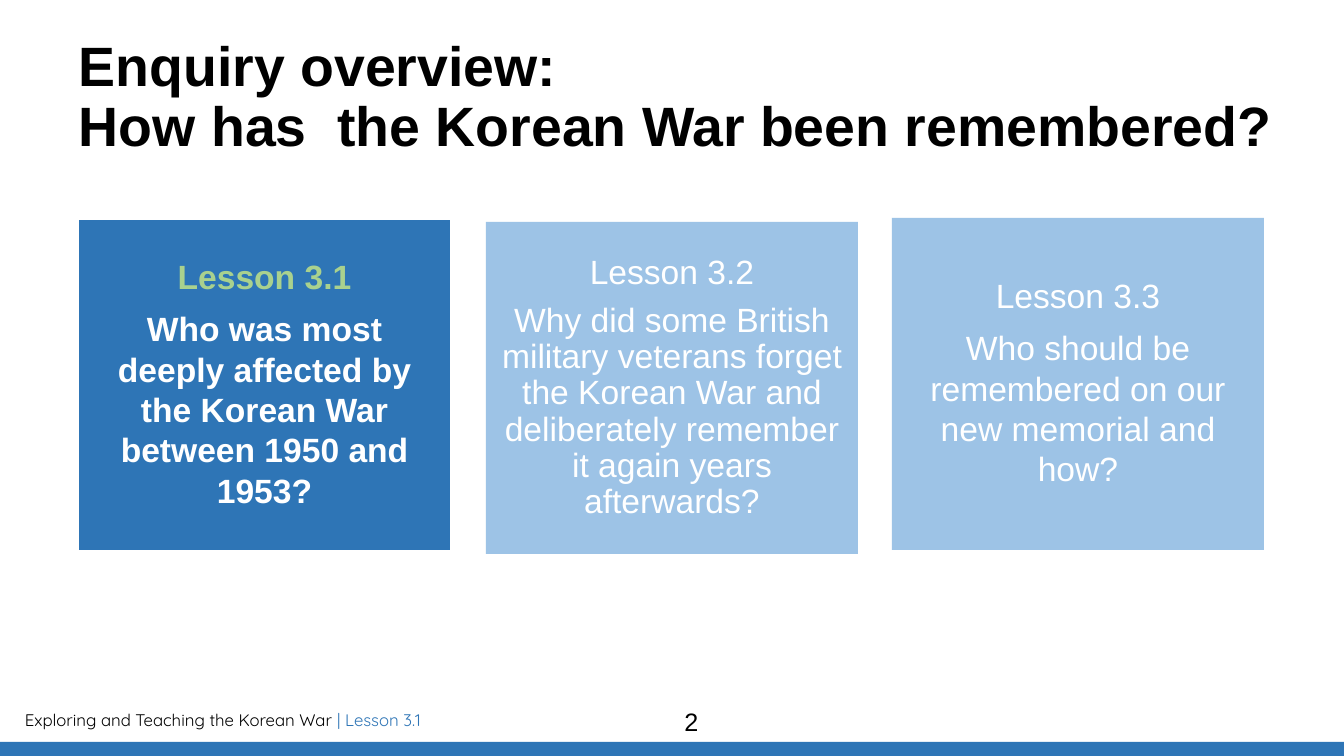
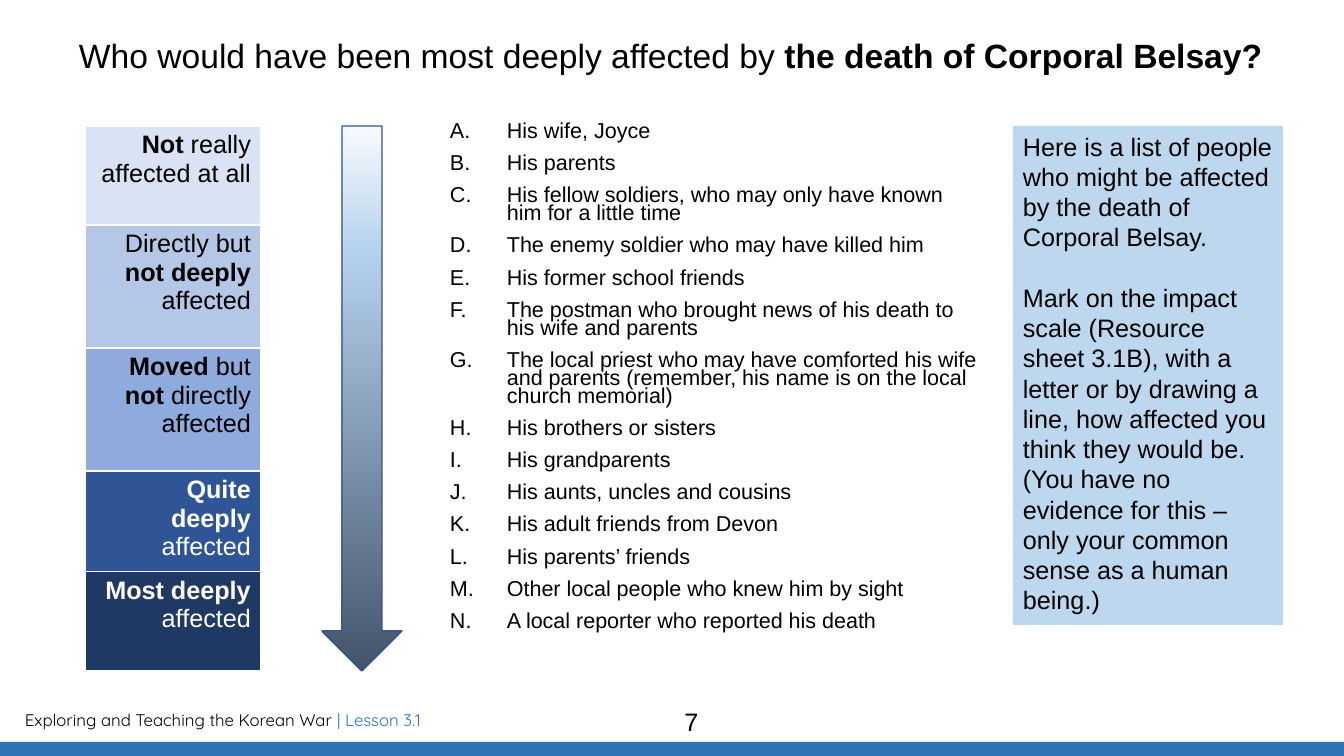
from lxml import etree
from pptx import Presentation
from pptx.dml.color import RGBColor
from pptx.enum.shapes import MSO_SHAPE as Shape
from pptx.enum.text import MSO_ANCHOR as Anchor, PP_ALIGN as Align
from pptx.oxml.ns import qn
from pptx.util import Emu, Pt

PX = 914400 / 100.8
FONT = "Arial"
FOOTER_FONT = "Quicksand"
BLACK = RGBColor(0x00, 0x00, 0x00)
WHITE = RGBColor(0xFF, 0xFF, 0xFF)
BLUE = RGBColor(0x2E, 0x75, 0xB6)
LIGHT_BLUE = RGBColor(0x9D, 0xC3, 0xE6)
PALE_BLUE = RGBColor(0xBD, 0xD7, 0xEE)
GREEN = RGBColor(0xA9, 0xD1, 0x8E)
ARROW_LINE = RGBColor(0x32, 0x54, 0x91)
ARROW_STOPS = [(0, "F7FAFD"), (23, "B5D2EC"), (100, "44546A")]

FOOTER = [("Exploring and Teaching the Korean War ", BLACK), ("| Lesson 3.1", BLUE)]

OVERVIEW_TITLE = [[("Enquiry overview:", True)],
                  [("How has \u00a0the Korean War been remembered?", True)]]
LESSONS = [
    {"name": "Lesson 3.1", "box": (79, 220, 371, 330), "fill": BLUE,
     "accent": GREEN, "bold": True, "spacing": None,
     "question": "Who was most deeply affected by the Korean War between 1950 and 1953?"},
    {"name": "Lesson 3.2", "box": (486, 222, 372, 332), "fill": LIGHT_BLUE,
     "accent": WHITE, "bold": False, "spacing": 0.9,
     "question": "Why did some British military veterans forget the Korean War "
                 "and deliberately remember it again years afterwards?"},
    {"name": "Lesson 3.3", "box": (892, 218, 372, 332), "fill": LIGHT_BLUE,
     "accent": WHITE, "bold": False, "spacing": None,
     "question": "Who should be remembered on our new memorial and how?"},
]

IMPACT_TITLE = [[("Who would have been most deeply affected by ", False),
                 ("the death of Corporal Belsay?", True)]]
PEOPLE = [
    "His wife, Joyce",
    "His parents",
    "His fellow soldiers, who may only have known him for a little time",
    "The enemy soldier who may have killed him",
    "His former school friends",
    "The postman who brought news of his death to his wife and parents",
    "The local priest who may have comforted his wife and parents "
    "(remember, his name is on the local church memorial)",
    "His brothers or sisters",
    "His grandparents",
    "His aunts, uncles and cousins",
    "His adult friends from Devon",
    "His parents’ friends",
    "Other local people who knew him by sight",
    "A local reporter who reported his death",
]
IMPACT_SCALE = [
    (99, "DAE3F3", BLACK, [("Not", True), (" really affected at all", False)]),
    (123, "B4C7E7", BLACK, [("Directly but ", False), ("not deeply ", True), ("affected", False)]),
    (123, "8FAADC", BLACK, [("Moved", True), (" but ", False), ("not", True),
                            (" directly affected", False)]),
    (99, "2F5597", WHITE, [("Quite \u00a0deeply ", True), ("affected", False)]),
    (99, "203864", WHITE, [("Most deeply ", True), ("affected", False)]),
]
TASK = [
    "Here is a list of people who might be affected by the death of Corporal Belsay.",
    "Mark on the impact scale (Resource sheet 3.1B), with a letter or by drawing a line, "
    "how affected you think they would be. (You have no evidence for this – "
    "only your common sense as a human being.)",
]


def px(value):
    return Emu(round(value * PX))


def place(box):
    return [px(value) for value in box]


def add_run(paragraph, text, size, color=BLACK, bold=False, font=FONT):
    run = paragraph.add_run()
    run.text = text
    run.font.name = font
    run.font.size = Pt(size)
    run.font.bold = bold
    run.font.color.rgb = color


def next_paragraph(frame, index):
    return frame.add_paragraph() if index else frame.paragraphs[0]


def set_margins(frame, margin):
    frame.margin_left = frame.margin_right = px(margin)
    frame.margin_top = frame.margin_bottom = px(margin)


def add_text(slide, box, margin=None):
    frame = slide.shapes.add_textbox(*place(box)).text_frame
    frame.word_wrap = True
    if margin is not None:
        set_margins(frame, margin)
    return frame


def add_block(slide, box, fill=None, kind=Shape.RECTANGLE):
    shape = slide.shapes.add_shape(kind, *place(box))
    shape.shadow.inherit = False
    shape.line.fill.background()
    if fill is not None:
        shape.fill.solid()
        shape.fill.fore_color.rgb = fill
    return shape


def add_slide(presentation, title, title_size, title_height, number):
    slide = presentation.slides.add_slide(presentation.slide_layouts[6])
    paragraph = add_text(slide, (15, 705, 788, 30)).paragraphs[0]
    for text, color in FOOTER:
        add_run(paragraph, text, 12, color, font=FOOTER_FONT)
    add_block(slide, (0, 742, 1344, 14), BLUE)
    paragraph = add_text(slide, (79, 39, 1247, title_height), 0).paragraphs[0]
    paragraph.line_spacing = 0.9
    for index, line in enumerate(title):
        if index:
            paragraph.add_line_break()
        for text, bold in line:
            add_run(paragraph, text, title_size, bold=bold)
    paragraph = add_text(slide, (435, 701, 513, 40)).paragraphs[0]
    paragraph.alignment = Align.CENTER
    add_run(paragraph, str(number), 18)
    return slide


def add_lesson(slide, lesson):
    frame = add_block(slide, lesson["box"], lesson["fill"]).text_frame
    frame.word_wrap = True
    frame.vertical_anchor = Anchor.MIDDLE
    set_margins(frame, 14)
    rows = [(lesson["name"], lesson["accent"], 0.9),
            (lesson["question"], WHITE, lesson["spacing"])]
    for index, (text, color, spacing) in enumerate(rows):
        paragraph = next_paragraph(frame, index)
        paragraph.alignment = Align.CENTER
        if spacing:
            paragraph.line_spacing = spacing
            paragraph.space_after = Pt(8.4)
        add_run(paragraph, text, 24, color, lesson["bold"])


def add_people(slide):
    frame = add_text(slide, (450, 124, 532, 555), 0)
    for index, person in enumerate(PEOPLE):
        paragraph = next_paragraph(frame, index)
        paragraph.line_spacing = 0.7
        if index:
            paragraph.space_before = Pt(10)
        properties = paragraph._p.get_or_add_pPr()
        properties.set("marL", str(px(57)))
        properties.set("indent", str(px(-57)))
        etree.SubElement(properties, qn("a:buFont"), typeface="+mj-lt")
        etree.SubElement(properties, qn("a:buAutoNum"), type="alphaUcPeriod")
        add_run(paragraph, person, 15.4)


def add_arrow(slide):
    arrow = add_block(slide, (322, 126, 80, 545), kind=Shape.DOWN_ARROW)
    arrow.fill.gradient()
    arrow.fill.gradient_angle = 270
    stops = arrow._element.spPr.find(qn("a:gradFill")).find(qn("a:gsLst"))
    for stop in list(stops):
        stops.remove(stop)
    for position, color in ARROW_STOPS:
        stop = etree.SubElement(stops, qn("a:gs"), pos=str(position * 1000))
        etree.SubElement(stop, qn("a:srgbClr"), val=color)
    arrow.line.color.rgb = ARROW_LINE
    arrow.line.width = Pt(1)


def add_borders(cell):
    properties = cell._tc.get_or_add_tcPr()
    for index, side in enumerate(("lnL", "lnR", "lnT", "lnB")):
        line = etree.Element(qn(f"a:{side}"), w=str(Pt(1)))
        fill = etree.SubElement(line, qn("a:solidFill"))
        etree.SubElement(fill, qn("a:srgbClr"), val=str(WHITE))
        properties.insert(index, line)


def add_impact_scale(slide):
    total = sum(row[0] for row in IMPACT_SCALE)
    box = place((85, 126, 176, total))
    table = slide.shapes.add_table(len(IMPACT_SCALE), 1, *box).table
    table.first_row = table.horz_banding = False
    for index, (height, fill, color, runs) in enumerate(IMPACT_SCALE):
        table.rows[index].height = px(height)
        cell = table.cell(index, 0)
        cell.fill.solid()
        cell.fill.fore_color.rgb = RGBColor.from_string(fill)
        add_borders(cell)
        paragraph = cell.text_frame.paragraphs[0]
        paragraph.alignment = Align.RIGHT
        for text, bold in runs:
            add_run(paragraph, text, 18, color, bold)


def add_task(slide):
    frame = add_block(slide, (1013, 126, 270, 499), PALE_BLUE).text_frame
    frame.word_wrap = True
    frame.vertical_anchor = Anchor.TOP
    for index, text in enumerate(TASK):
        paragraph = next_paragraph(frame, index)
        paragraph.alignment = Align.LEFT
        if index:
            paragraph.space_before = Pt(21.6)
        add_run(paragraph, text, 18)


def main():
    presentation = Presentation()
    presentation.slide_width, presentation.slide_height = px(1344), px(756)

    overview = add_slide(presentation, OVERVIEW_TITLE, 39.6, 146, 2)
    for lesson in LESSONS:
        add_lesson(overview, lesson)

    impact = add_slide(presentation, IMPACT_TITLE, 24, 55, 7)
    add_people(impact)
    add_arrow(impact)
    add_impact_scale(impact)
    add_task(impact)

    presentation.save("out.pptx")


if __name__ == "__main__":
    main()
